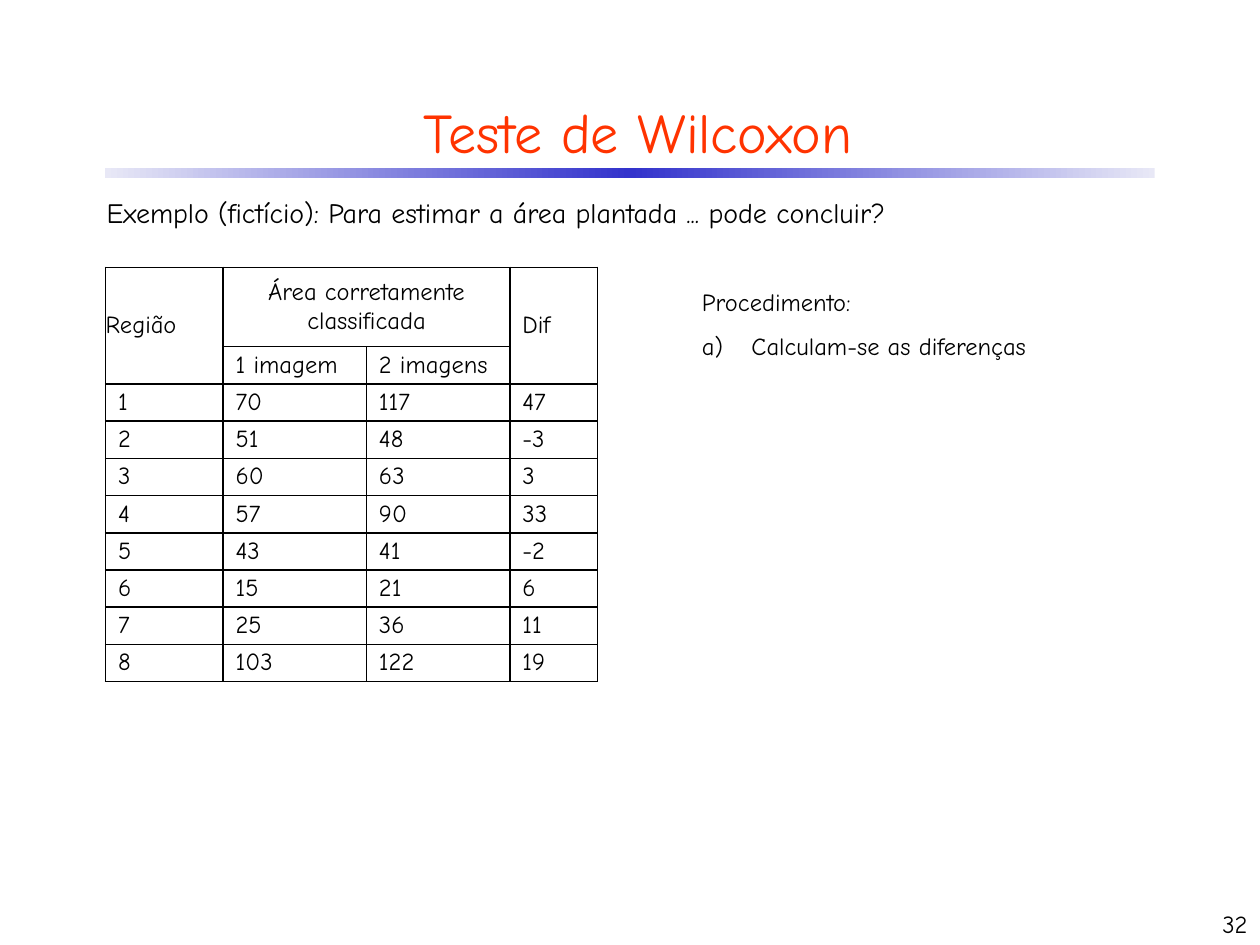
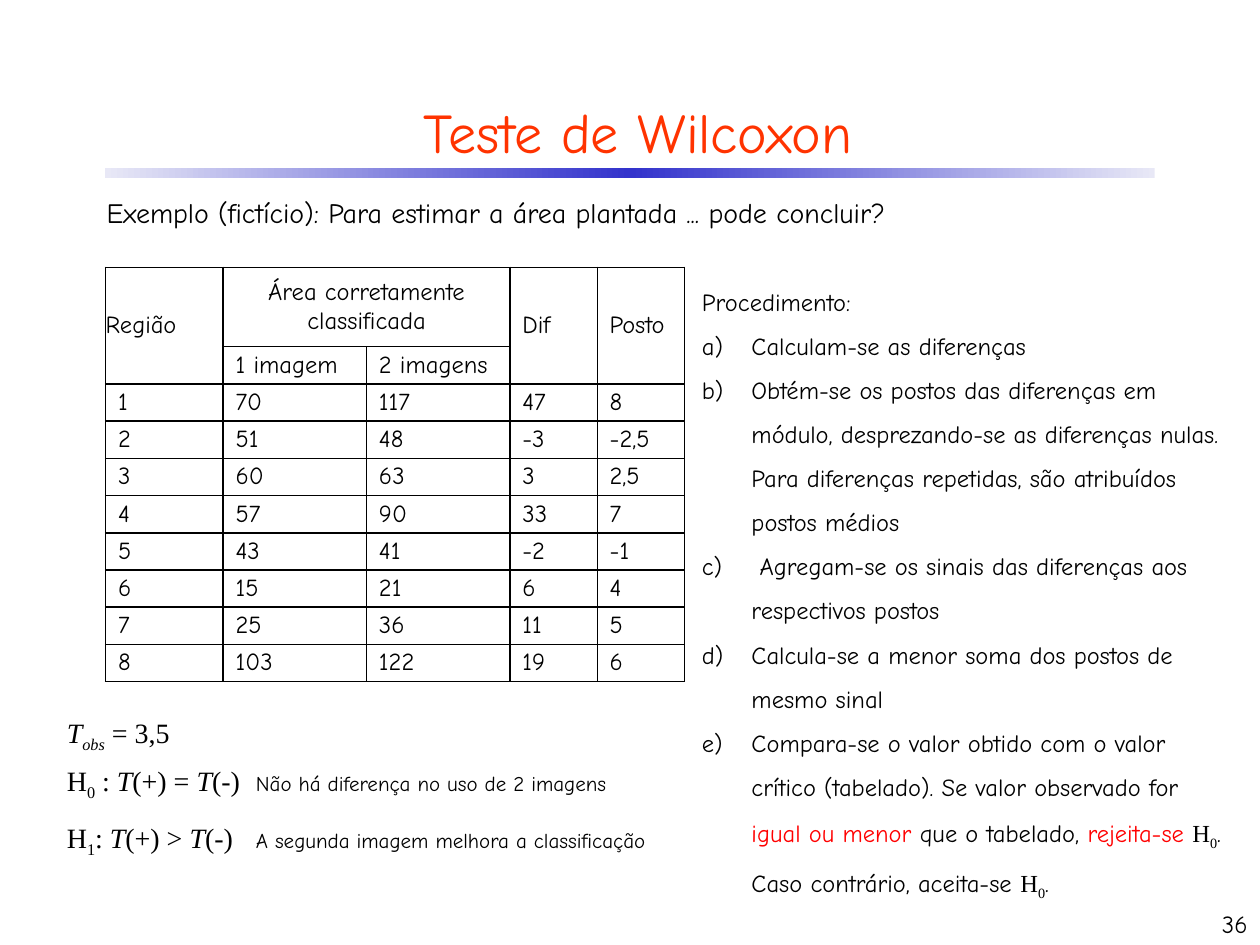
from copy import deepcopy
from pptx import Presentation
from pptx.dml.color import RGBColor
from pptx.enum import shapes, text
from pptx.oxml import parse_xml
from pptx.oxml.ns import nsdecls, qn
from pptx.util import Cm, Pt

hue = RGBColor.from_string
HAND, SERIF = "Comic Neue", "Times New Roman"
BLACK, RED, ORANGE = "000000", "FF0000", "FF3300"
WHITE, BLUE, PALE = "FFFFFF", "3333CC", "E8E8F6"


def write(para, words, size=14, font=HAND, color=BLACK, mark=""):
    """Add one run; mark holds "i" for italic and "_" for subscript."""
    run = para.add_run()
    run.text = words
    run.font.size = Pt(size)
    run.font.name = font
    run.font.color.rgb = hue(color)
    run.font.italic = "i" in mark
    if "_" in mark:
        run.font._element.set("baseline", "-25000")


def box(slide, place, paras, indent=0.0, gap=1.0):
    """Add a text box; paras holds (runs, first list number or 0, tab stop or 0)."""
    frame = slide.shapes.add_textbox(*[Cm(n) for n in place]).text_frame
    frame.word_wrap = True
    for i, (runs, start, tab) in enumerate(paras):
        para = frame.add_paragraph() if i else frame.paragraphs[0]
        para.line_spacing = gap
        props = para._p.get_or_add_pPr()
        props.set("marL", str(Cm(indent)))
        props.set("indent", str(-Cm(indent)))
        if start:
            props.append(parse_xml(
                f'<a:buAutoNum {nsdecls("a")} type="alphaLcParenR" startAt="{start}"/>'))
        if tab:
            props.append(parse_xml(
                f'<a:tabLst {nsdecls("a")}><a:tab pos="{Cm(tab)}" algn="l"/></a:tabLst>'))
        for run in runs:
            write(para, *run)
    return frame


deck = Presentation()
deck.slide_width, deck.slide_height = Cm(25.4), Cm(19.05)
plan = deck.slide_layouts[5]

heads = ["Região", "Área corretamente classificada", "", "Dif", "Posto"]
subs = ["", "1 imagem", "2 imagens", "", ""]
areas = [
    ("1", "70", "117", "47", "8"),
    ("2", "51", "48", "-3", "-2,5"),
    ("3", "60", "63", "3", "2,5"),
    ("4", "57", "90", "33", "7"),
    ("5", "43", "41", "-2", "-1"),
    ("6", "15", "21", "6", "4"),
    ("7", "25", "36", "11", "5"),
    ("8", "103", "122", "19", "6"),
]
grid = [heads, subs, *areas]
widths = [2.37, 2.89, 2.89, 1.76, 1.76]
steps = [
    "Calculam-se as diferenças",
    "Obtém-se os postos das diferenças em módulo, desprezando-se as diferenças nulas. "
    "Para diferenças repetidas, são atribuídos postos médios",
    " Agregam-se os sinais das diferenças aos respectivos postos",
    "Calcula-se a menor soma dos postos de mesmo sinal",
]

# Page number, table columns and procedure steps of each slide
for page, cols, count in [("32", 4, 1), ("36", 5, 4)]:
    slide = deck.slides.add_slide(plan)
    title = slide.shapes.title
    title.left, title.top, title.width, title.height = Cm(0.84), Cm(1.7), Cm(24.05), Cm(1.9)
    title.text_frame.vertical_anchor = text.MSO_ANCHOR.MIDDLE
    head = title.text_frame.paragraphs[0]
    head.alignment = text.PP_ALIGN.CENTER
    write(head, "Teste de Wilcoxon", 32, HAND, ORANGE)

    box(slide, (1.9, 3.81, 22.1, 0.94), [
        ([("Exemplo (fictício): Para estimar a área plantada ... pode concluir?", 16)], 0, 0),
    ], 0.53)

    table = slide.shapes.add_table(len(grid), cols, Cm(2.13), Cm(5.39),
                                   Cm(sum(widths[:cols])), Cm(8.35)).table
    table.first_row = table.horz_banding = False
    for c in range(cols):
        table.columns[c].width = Cm(widths[c])
    for r, row in enumerate(grid):
        table.rows[r].height = Cm(0.75 if r else 1.6)
        for c in range(cols):
            cell = table.cell(r, c)
            cell.fill.solid()
            cell.fill.fore_color.rgb = hue(WHITE)
            cell.vertical_anchor = text.MSO_ANCHOR.MIDDLE
            cell.margin_top = cell.margin_bottom = 0
            cell.margin_left = cell.margin_right = Cm(0 if r == c == 0 else 0.25)
            for i, side in enumerate("LRTB"):
                cell._tc.get_or_add_tcPr().insert(i, parse_xml(
                    f'<a:ln{side} {nsdecls("a")} w="{Pt(1)}"><a:solidFill>'
                    f'<a:srgbClr val="{BLACK}"/></a:solidFill></a:ln{side}>'))
            if row[c]:
                write(cell.text_frame.paragraphs[0], row[c])
    table.cell(0, 1).text_frame.paragraphs[0].alignment = text.PP_ALIGN.CENTER
    table.cell(0, 1).merge(table.cell(0, 2))
    for c in (0, *range(3, cols)):
        table.cell(0, c).merge(table.cell(1, c))

    box(slide, (13.9, 5.36, 11.12, 2.05 if count == 1 else 9.25), [
        ([("Procedimento:",)], 0, 0),
        *[([(step,)], 1, 0) for step in steps[:count]],
    ], 1, 1.5)

    foot = box(slide, (20.12, 17.78, 5.28, 1.27), [([(page,)], 0, 0)])
    foot.vertical_anchor = text.MSO_ANCHOR.BOTTOM
    foot.paragraphs[0].alignment = text.PP_ALIGN.RIGHT

# Result, hypotheses and decision, on the last slide only
box(slide, (1.1, 13.92, 11.12, 1.17), [
    ([("T", 16, SERIF, BLACK, "i"), ("obs", 16, SERIF, BLACK, "i_"),
      (" = 3,5", 16, SERIF)], 0, 0),
], 1, 1.5)

claims = [
    ("0", " : ", "(+) = ", "Não há diferença no uso de 2 imagens", 3.89),
    ("1", ": ", "(+) > ", "A segunda imagem melhora a classificação", 3.61),
]
box(slide, (1.1, 14.88, 12.52, 2.3), [
    ([("H", 16, SERIF), (index, 16, SERIF, BLACK, "_"), (colon, 16, SERIF),
      ("T", 16, SERIF, BLACK, "i"), (sign, 16, SERIF),
      ("T", 16, SERIF, BLACK, "i"), ("(-)\t", 16, SERIF), (claim, 12)], 0, tab)
    for index, colon, sign, claim, tab in claims
], 0, 1.5)

null = [("H", 14, SERIF), ("0", 14, SERIF, BLACK, "_")]
box(slide, (13.9, 14.25, 11.12, 3.86), [
    ([("Compara-se o valor obtido com o valor crítico (tabelado). Se valor observado for ",),
      ("igual ou menor", 14, HAND, RED), (" que o tabelado, ",),
      ("rejeita-se ", 14, HAND, RED), *null,
      (". Caso contrário, aceita-se ",), *null, (".",)], 5, 0),
], 1, 1.5)

# The band under the title belongs to the layout
band = slide.shapes.add_shape(shapes.MSO_SHAPE.RECTANGLE,
                              Cm(2.12), Cm(3.39), Cm(21.16), Cm(0.2))
band.shadow.inherit = False
band.line.fill.background()
band.fill.gradient()
band.fill.gradient_angle = 0
stops = band._element.spPr.find(".//" + qn("a:gsLst"))
stops.append(deepcopy(stops[0]))
for stop, (spot, color) in zip(band.fill.gradient_stops, [(0, PALE), (0.5, BLUE), (1, PALE)]):
    stop.position = spot
    stop.color.rgb = hue(color)
plan.shapes.element.append(band._element)

deck.save("out.pptx")
